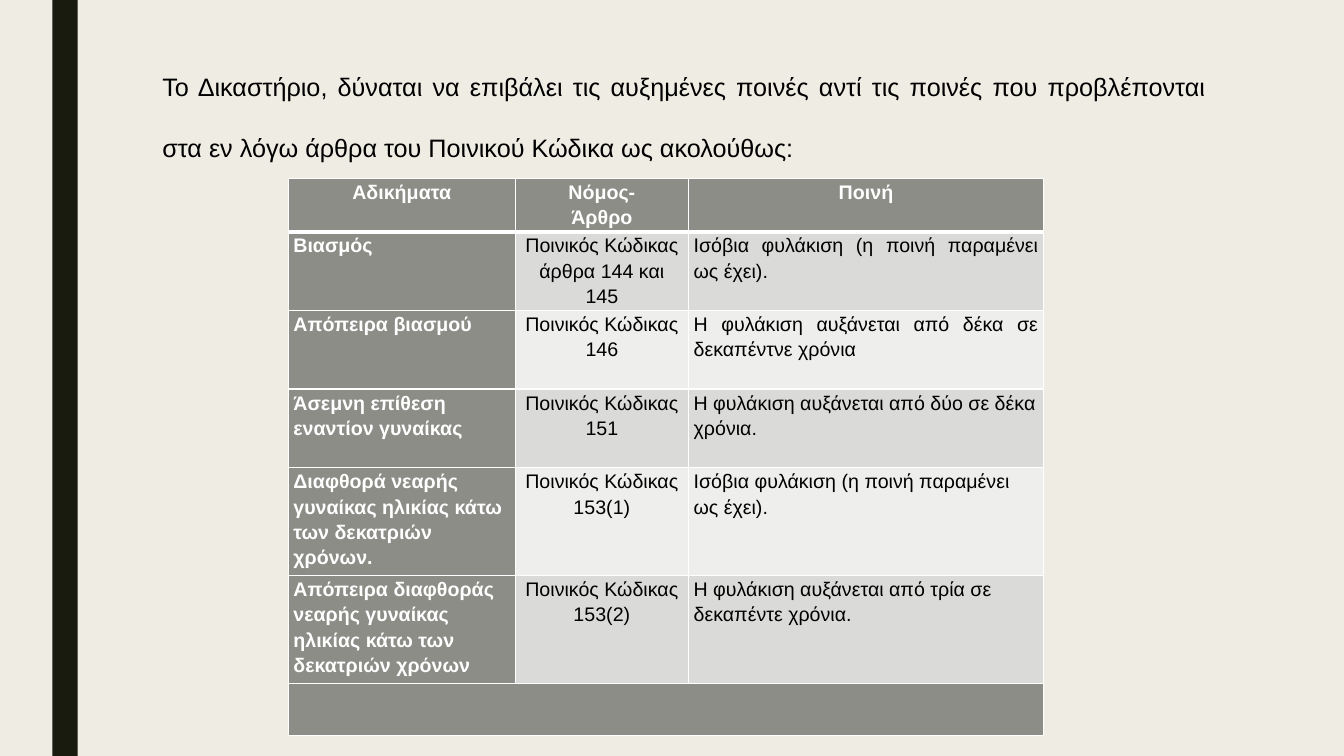
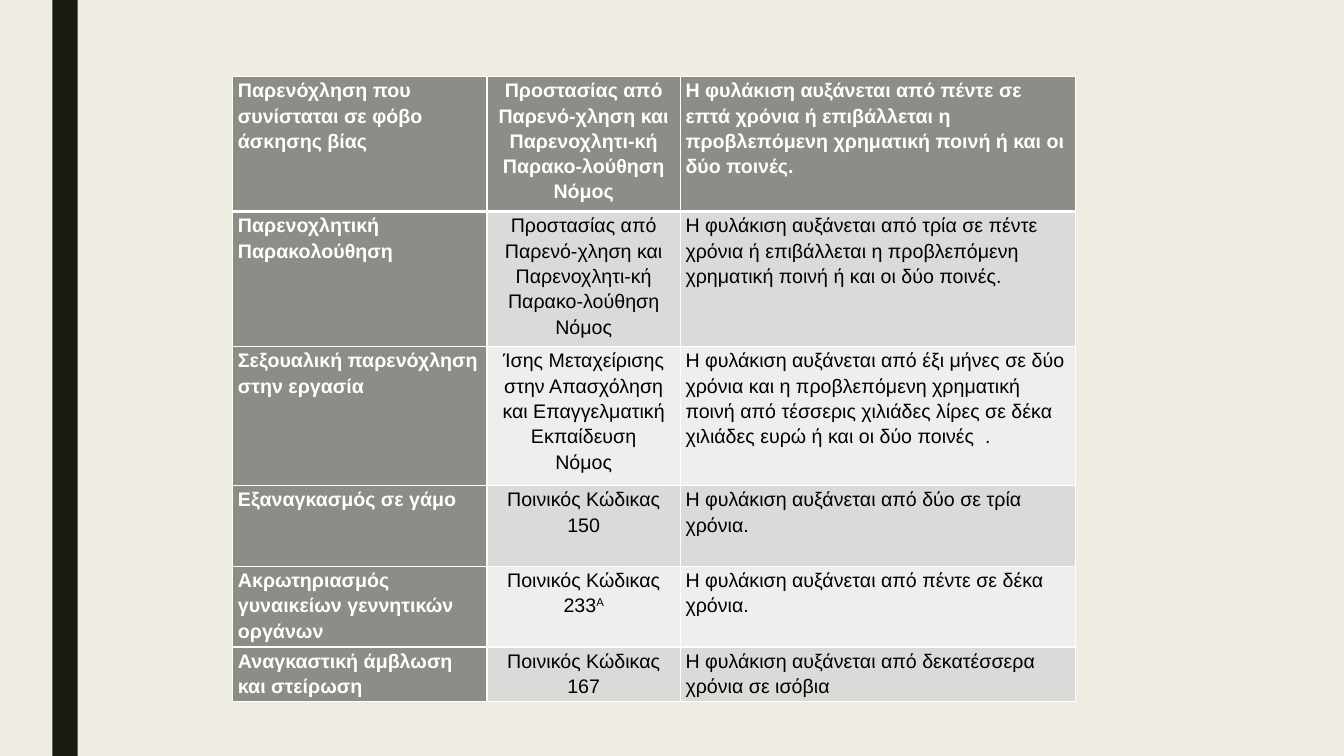
from lxml import etree
from pptx import Presentation
from pptx.dml.color import RGBColor
from pptx.enum.shapes import MSO_SHAPE
from pptx.enum.text import MSO_ANCHOR, PP_ALIGN
from pptx.oxml.ns import qn
from pptx.util import Inches, Pt

RECT = MSO_SHAPE.RECTANGLE
TOP = MSO_ANCHOR.TOP
LEFT, MID, FULL = PP_ALIGN.LEFT, PP_ALIGN.CENTER, PP_ALIGN.JUSTIFY

HUES = {"back": "EFEDE3", "band": "191B0E", "head": "8C8D86", "odd": "DADBD9",
        "even": "EEEEED", "white": "FFFFFF", "black": "000000"}
BASE = {"name": "Arial", "size": Pt(14)}
INSET = {"margin_left": Inches(0.05), "margin_right": Inches(0.05),
         "margin_top": 0, "margin_bottom": 0, "vertical_anchor": TOP}

INTRO = ("Το Δικαστήριο, δύναται να επιβάλει τις αυξημένες ποινές αντί τις ποινές "
         "που προβλέπονται στα εν λόγω άρθρα του Ποινικού Κώδικα ως ακολούθως:")
CODE = "Ποινικός Κώδικας"
STALK = "Προστασίας από Παρενό-χληση και Παρενοχλητι-κή Παρακο-λούθηση Νόμος"
FINE = "χρόνια ή επιβάλλεται η προβλεπόμενη χρηματική ποινή ή και οι δύο ποινές."
LIFE = "Ισόβια φυλάκιση (η ποινή παραμένει ως έχει)."
RISE = "Η φυλάκιση αυξάνεται από"

CRIMES = {
    "box": (2.86, 1.77),
    "cols": (2.25, 1.72, 3.52),
    "rows": (0.53, 0.78, 0.78, 0.78, 1.07, 1.07, 0.52),
    "aligns": [(MID, MID, MID)] + [(FULL, MID, FULL)] * 2 + [(LEFT, MID, LEFT)] * 3,
    "text": [
        ("Αδικήματα", "Νόμος-\nΆρθρο", "Ποινή"),
        ("Βιασμός", f"{CODE} άρθρα 144 και 145", LIFE),
        ("Απόπειρα βιασμού", f"{CODE}\n146", f"{RISE} δέκα σε δεκαπέντνε χρόνια"),
        ("Άσεμνη επίθεση εναντίον γυναίκας", f"{CODE}\n151",
         f"{RISE} δύο σε δέκα χρόνια."),
        ("Διαφθορά νεαρής γυναίκας ηλικίας κάτω των δεκατριών χρόνων.",
         f"{CODE}\n153(1)", LIFE),
        ("Απόπειρα διαφθοράς νεαρής γυναίκας ηλικίας κάτω των δεκατριών χρόνων",
         f"{CODE}\n153(2)", f"{RISE} τρία σε δεκαπέντε χρόνια."),
    ],
}
ABUSE = {
    "box": (2.31, 0.76),
    "cols": (2.52, 1.92, 3.92),
    "rows": (1.34, 1.34, 1.38, 0.8, 0.8, 0.54),
    "aligns": [(LEFT, MID, LEFT)] * 6,
    "text": [
        ("Παρενόχληση που συνίσταται σε φόβο άσκησης βίας", STALK,
         f"{RISE} πέντε σε επτά {FINE}"),
        ("Παρενοχλητική Παρακολούθηση", STALK, f"{RISE} τρία σε πέντε {FINE}"),
        ("Σεξουαλική παρενόχληση στην εργασία",
         "Ίσης Μεταχείρισης στην Απασχόληση και Επαγγελματική Εκπαίδευση\nΝόμος",
         f"{RISE} έξι μήνες σε δύο χρόνια και η προβλεπόμενη χρηματική ποινή από "
         "τέσσερις χιλιάδες λίρες σε δέκα χιλιάδες ευρώ ή και οι δύο ποινές  ."),
        ("Εξαναγκασμός σε γάμο", f"{CODE}\n150", f"{RISE} δύο σε τρία χρόνια."),
        ("Ακρωτηριασμός γυναικείων γεννητικών οργάνων", f"{CODE}\n233^Α",
         f"{RISE} πέντε σε δέκα χρόνια."),
        ("Αναγκαστική άμβλωση και στείρωση", f"{CODE}\n167",
         f"{RISE} δεκατέσσερα χρόνια σε ισόβια"),
    ],
}


def style(item, **look):
    """Set each given format value on the item."""
    for key, value in look.items():
        setattr(item, key, value)


def paint(fill, hue):
    """Fill with one of the named colours."""
    fill.solid()
    fill.fore_color.rgb = RGBColor.from_string(HUES[hue])


def write(frame, text, hue, para, font):
    """Write lines as paragraphs; what follows a caret is raised."""
    for i, line in enumerate(text.split("\n")):
        part = frame.add_paragraph() if i else frame.paragraphs[0]
        style(part, **para)
        for j, piece in enumerate(line.split("^")):
            run = part.add_run()
            run.text = piece
            style(run.font, **{**BASE, **font})
            run.font.color.rgb = RGBColor.from_string(HUES[hue])
            if j:
                run.font._element.set("baseline", "30000")


def edge(cell, row):
    """Draw white cell borders, thick beneath the first row."""
    props = cell._tc.get_or_add_tcPr()
    for side in "LRTB":
        thick = (row, side) in ((0, "B"), (1, "T"))
        line = etree.SubElement(props, qn(f"a:ln{side}"), w=str(Pt(3 if thick else 1)))
        fill = etree.SubElement(line, qn("a:solidFill"))
        etree.SubElement(fill, qn("a:srgbClr"), val=HUES["white"])


def grid(slide, data):
    """Place a table of offences, laws and penalties."""
    cols, rows, text = data["cols"], data["rows"], data["text"]
    left, top = data["box"]
    table = slide.shapes.add_table(len(rows), len(cols), Inches(left), Inches(top),
                                   Inches(sum(cols)), Inches(sum(rows))).table
    style(table, first_row=True, horz_banding=False)
    for col, width in zip(table.columns, cols):
        col.width = Inches(width)
    for r, height in enumerate(rows):
        table.rows[r].height = Inches(height)
        for c in range(len(cols)):
            cell = table.cell(r, c)
            head = r == 0 or c == 0 or r >= len(text)
            edge(cell, r)
            paint(cell.fill, "head" if head else "odd" if r % 2 else "even")
            style(cell, **INSET)
            if r < len(text):
                write(cell.text_frame, text[r][c], "white" if head else "black",
                      {"alignment": data["aligns"][r][c], "line_spacing": 1.15},
                      {"bold": head})
    if len(rows) > len(text):
        table.cell(len(text), 0).merge(table.cell(len(text), len(cols) - 1))


def intro(slide):
    """Set the opening sentence in the title."""
    title = slide.shapes.title
    style(title, left=Inches(1.51), top=Inches(0.36),
          width=Inches(10.55), height=Inches(1.35))
    style(title.text_frame, vertical_anchor=TOP, word_wrap=True)
    write(title.text_frame, INTRO, "black",
          {"alignment": FULL, "line_spacing": 2.0, "space_after": Pt(10)},
          {"size": Pt(18)})


def start(deck, layout):
    """Add a slide with the dark band at its left."""
    slide = deck.slides.add_slide(deck.slide_layouts[layout])
    band = slide.shapes.add_shape(RECT, Inches(0.52), 0, Inches(0.25), deck.slide_height)
    band.shadow.inherit = False
    paint(band.fill, "band")
    band.line.fill.background()
    return slide


def main():
    """Build and save both slides."""
    deck = Presentation()
    style(deck, slide_width=Inches(13.33), slide_height=Inches(7.5))
    paint(deck.slide_master.background.fill, "back")
    first = start(deck, 5)
    intro(first)
    grid(first, CRIMES)
    grid(start(deck, 6), ABUSE)
    deck.save("out.pptx")


if __name__ == "__main__":
    main()
